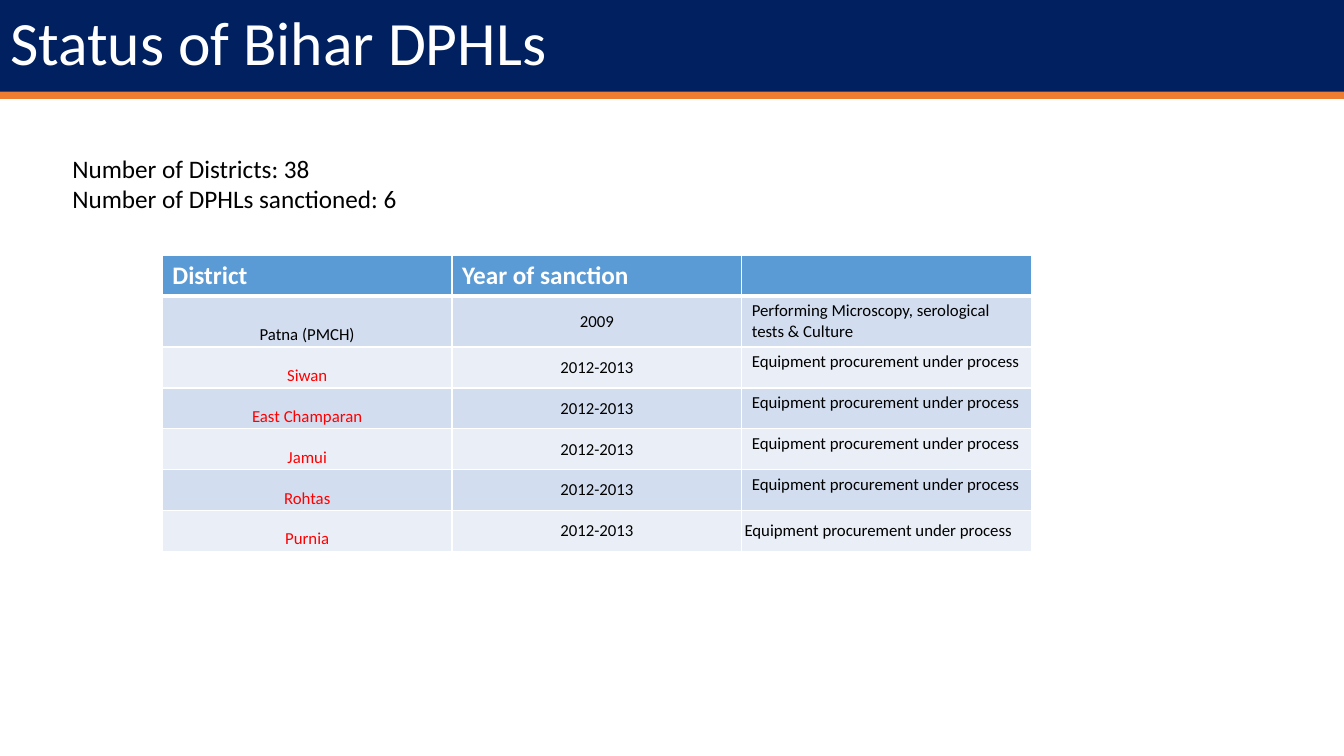
from dataclasses import dataclass

from lxml.etree import SubElement
from pptx import Presentation
from pptx.dml.color import RGBColor
from pptx.enum.shapes import MSO_SHAPE
from pptx.enum.text import MSO_ANCHOR, MSO_AUTO_SIZE, PP_ALIGN
from pptx.oxml.ns import qn
from pptx.util import Inches, Pt


@dataclass(frozen=True)
class Theme:
    font: str = "Calibri"
    navy: str = "002060"
    orange: str = "ED7D31"
    header_blue: str = "5B9BD5"
    bands: tuple = ("D2DEEF", "EAEFF7")
    white: str = "FFFFFF"
    black: str = "000000"
    red: str = "FF0000"
    title_size: int = 44
    body_size: int = 18
    cell_size: int = 12
    border: int = 1
    header_border: int = 3


class StatusSlide:
    def __init__(self, presentation, theme):
        self.theme = theme
        self.width = presentation.slide_width
        self.height = presentation.slide_height
        self.slide = presentation.slides.add_slide(presentation.slide_layouts[5])

    def box(self, left, top, width, height):
        """Turn percentages of the slide's size into lengths."""
        return (int(self.width * left / 100), int(self.height * top / 100),
                int(self.width * width / 100), int(self.height * height / 100))

    def fill(self, target, color):
        target.fill.solid()
        target.fill.fore_color.rgb = RGBColor.from_string(color)

    def run(self, paragraph, text, size, color, bold=False):
        run = paragraph.add_run()
        run.text = text
        run.font.name = self.theme.font
        run.font.size = Pt(size)
        run.font.bold = bold
        run.font.color.rgb = RGBColor.from_string(color)

    def bar(self, *area):
        bar = self.slide.shapes.add_shape(MSO_SHAPE.RECTANGLE, *self.box(*area))
        bar.shadow.inherit = False
        self.fill(bar, self.theme.orange)
        bar.line.color.rgb = RGBColor.from_string(self.theme.orange)
        bar.line.width = Pt(1)
        return bar

    def title(self, text, *area):
        title = self.slide.shapes.title
        title.left, title.top, title.width, title.height = self.box(*area)
        self.fill(title, self.theme.navy)
        frame = title.text_frame
        frame.auto_size = MSO_AUTO_SIZE.NONE
        frame.vertical_anchor = MSO_ANCHOR.MIDDLE
        paragraph = frame.paragraphs[0]
        paragraph.alignment = PP_ALIGN.LEFT
        paragraph.line_spacing = 0.9
        self.run(paragraph, text, self.theme.title_size, self.theme.white)
        return title

    def text(self, lines, *area):
        frame = self.slide.shapes.add_textbox(*self.box(*area)).text_frame
        frame.word_wrap = True
        frame.auto_size = MSO_AUTO_SIZE.SHAPE_TO_FIT_TEXT
        for index, line in enumerate(lines):
            paragraph = frame.add_paragraph() if index else frame.paragraphs[0]
            self.run(paragraph, line, self.theme.body_size, self.theme.black)

    def borders(self, cell, row):
        properties = cell._tc.get_or_add_tcPr()
        for side in ("L", "R", "T", "B"):
            under_header = (row, side) in ((0, "B"), (1, "T"))
            width = self.theme.header_border if under_header else self.theme.border
            line = SubElement(properties, qn(f"a:ln{side}"), w=str(Pt(width)))
            solid = SubElement(line, qn("a:solidFill"))
            SubElement(solid, qn("a:srgbClr"), val=self.theme.white)

    def tighten(self, cell, anchor):
        cell.vertical_anchor = anchor
        cell.margin_left = cell.margin_right = Pt(2)
        cell.margin_top = cell.margin_bottom = Pt(1.5)

    def table(self, header, records, *area):
        theme = self.theme
        rows = [header, *records]
        table = self.slide.shapes.add_table(
            len(rows), len(header), *self.box(*area)).table
        for row, values in enumerate(rows):
            for column, value in enumerate(values):
                cell = table.cell(row, column)
                paragraph = cell.text_frame.paragraphs[0]
                self.borders(cell, row)
                if row == 0:
                    self.fill(cell, theme.header_blue)
                    if value:
                        self.run(paragraph, value, theme.body_size, theme.white, True)
                    continue
                self.fill(cell, theme.bands[(row - 1) % 2])
                color = theme.red if column == 0 and row > 1 else theme.black
                self.run(paragraph, value, theme.cell_size, color)
                if column < 2:
                    paragraph.alignment = PP_ALIGN.CENTER
                    self.tighten(cell, MSO_ANCHOR.MIDDLE if column else MSO_ANCHOR.BOTTOM)
        self.tighten(table.cell(len(records), 2), MSO_ANCHOR.MIDDLE)


def main():
    presentation = Presentation()
    presentation.slide_width = Inches(13.33)
    presentation.slide_height = Inches(7.5)
    status = StatusSlide(presentation, Theme())

    bar = status.bar(0, 12.13, 100, 0.93)
    title = status.title("Status of Bihar DPHLs", 0, 0, 100, 12.13)
    bar.element.addnext(title.element)

    pending = ("Siwan", "East Champaran", "Jamui", "Rohtas", "Purnia")
    records = [("Patna (PMCH)", "2009",
                "Performing Microscopy, serological tests & Culture")]
    records += [(district, "2012-2013", "Equipment procurement under process")
                for district in pending]
    status.table(("District", "Year of sanction", ""), records,
                 12.08, 33.73, 64.67, 37.9)
    status.text(("Number of Districts: 38", "Number of DPHLs sanctioned: 6"),
                4.65, 19.6, 50.64, 9.47)
    presentation.save("out.pptx")


if __name__ == "__main__":
    main()
